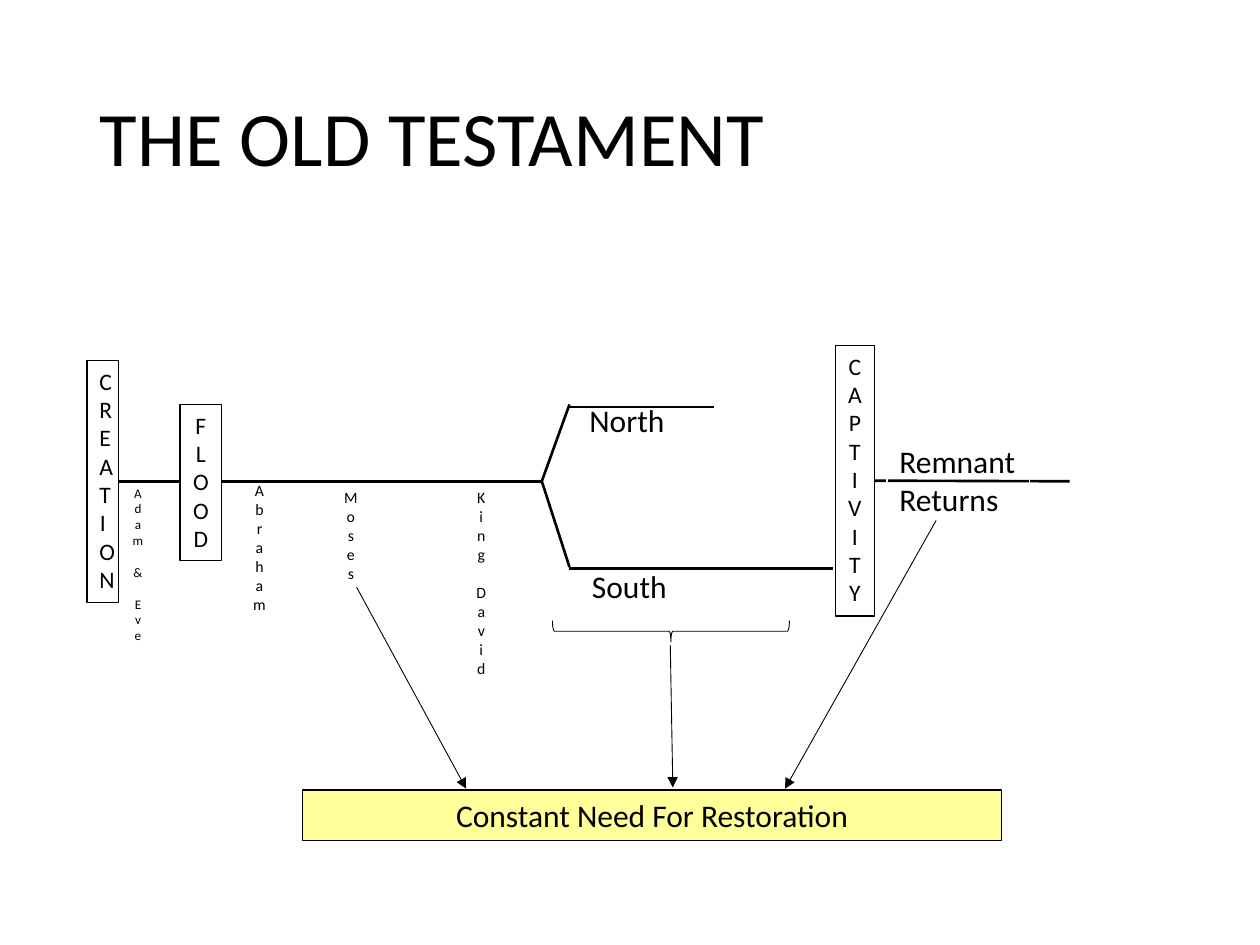
from lxml.etree import SubElement
from pptx import Presentation
from pptx.dml.color import RGBColor
from pptx.enum.shapes import MSO_CONNECTOR, MSO_SHAPE
from pptx.enum.text import MSO_ANCHOR, MSO_AUTO_SIZE, PP_ALIGN
from pptx.oxml.ns import qn
from pptx.util import Inches, Pt

THEME = {
    "font": "Calibri",
    "ink": RGBColor(0, 0, 0),
    "paper": RGBColor(255, 255, 255),
    "highlight": RGBColor(0xFF, 0xFF, 0x99),
    "title": 44, "label": 18, "event": 13.5, "person": 9, "small": 7.5,
    "timeline": 1.5, "border": 0.75, "arrow": 0.5,
}

TITLE = ("THE OLD TESTAMENT", (0.69, 0.4, 8.62, 1.45))

AXIS = 3.82
FORK = (4.3, AXIS)
TIMELINE = {
    "history": ((0.94, AXIS), FORK),
    "north rise": (FORK, (4.52, 3.21)),
    "south fall": (FORK, (4.52, 4.5)),
    "north": ((4.52, 3.23), (5.67, 3.23)),
    "south": ((4.52, 4.51), (6.61, 4.51)),
    "return": ((6.94, AXIS), (8.49, AXIS)),
}
JOINED_STARTS = {"history": "CREATION", "return": "CAPTIVITY"}

EVENTS = [
    ("CREATION", (0.69, 2.86, 0.25, 1.92), True),
    ("FLOOD", (1.43, 3.21, 0.33, 1.24), False),
    ("CAPTIVITY", (6.63, 2.74, 0.31, 2.15), False),
]
PEOPLE = [
    ("Adam & Eve", (0.94, 3.8, 0.31, 1.36), "small"),
    ("Abraham", (1.91, 3.77, 0.3, 1.16), "person"),
    ("Moses", (2.63, 3.82, 0.31, 0.86), "person"),
    ("King David", (3.68, 3.82, 0.28, 1.62), "person"),
]
KINGDOMS = [
    ("North", (4.58, 3.13, 0.8, 0.4)),
    ("South", (4.6, 4.45, 0.8, 0.4)),
]
REMNANT = (["Remnant", "Returns"], (7.04, 3.46, 1.13, 0.71))
RESTORATION = ("Constant Need For Restoration", (2.4, 6.27, 5.55, 0.4))
BRACE = (5.24, 4.07, 0.17, 1.88)
ARROWS = [
    ((2.83, 4.66), (3.7, 6.26)),
    ((7.43, 4.13), (6.23, 6.26)),
    ((5.32, 5.12), (5.34, 6.25)),
]


def inches(values):
    return [Inches(value) for value in values]


def apply(target, values):
    for name, value in values.items():
        setattr(target, name, value)


def format_font(font, size):
    apply(font, {"name": THEME["font"], "size": Pt(THEME[size])})
    font.color.rgb = THEME["ink"]


def format_line(line, width, color="ink"):
    line.color.rgb = THEME[color]
    line.width = Pt(THEME[width])


def write(shape, lines, size, align=PP_ALIGN.LEFT, wrap=False, gaps=()):
    frame = shape.text_frame
    apply(frame, {"word_wrap": wrap, "vertical_anchor": MSO_ANCHOR.TOP,
                  "auto_size": MSO_AUTO_SIZE.SHAPE_TO_FIT_TEXT})
    frame.text = "\n".join(lines)
    for index, paragraph in enumerate(frame.paragraphs):
        paragraph.alignment = align
        if index in gaps:
            paragraph.space_before = Pt(THEME[size] * 1.22)
        format_font(paragraph.font, size)


def write_stacked(shape, text, size, wrap=False):
    letters, gaps = [], []
    for word in text.split():
        if letters:
            gaps.append(len(letters))
        letters.extend(word)
    write(shape, letters, size, PP_ALIGN.CENTER, wrap, gaps)


def add_box(slide, box, fill=None, border="ink", width="border", kind=MSO_SHAPE.RECTANGLE):
    shape = slide.shapes.add_shape(kind, *inches(box))
    shape.shadow.inherit = False
    if fill:
        shape.fill.solid()
        shape.fill.fore_color.rgb = THEME[fill]
    else:
        shape.fill.background()
    format_line(shape.line, width, border)
    return shape


def add_line(slide, start, end, width, arrow=False):
    connector = slide.shapes.add_connector(MSO_CONNECTOR.STRAIGHT, *inches(start + end))
    format_line(connector.line, width)
    if arrow:
        SubElement(connector.line._get_or_add_ln(), qn("a:tailEnd"), type="triangle")
    SubElement(connector._element.spPr, qn("a:effectLst"))
    return connector


def add_title(slide):
    text, box = TITLE
    title = slide.shapes.title
    apply(title, dict(zip(("left", "top", "width", "height"), inches(box))))
    title.text_frame.text = text
    title.text_frame.vertical_anchor = MSO_ANCHOR.MIDDLE
    paragraph = title.text_frame.paragraphs[0]
    apply(paragraph, {"alignment": PP_ALIGN.LEFT, "line_spacing": 0.9})
    format_font(paragraph.font, "title")


def main():
    presentation = Presentation()
    apply(presentation, {"slide_width": Inches(10), "slide_height": Inches(7.5)})
    slide = presentation.slides.add_slide(presentation.slide_layouts[5])
    add_title(slide)

    lines = {name: add_line(slide, *ends, "timeline") for name, ends in TIMELINE.items()}

    events = {}
    for text, box, wrap in EVENTS:
        events[text] = add_box(slide, box, "paper")
        write_stacked(events[text], text, "event", wrap)
    for name, event in JOINED_STARTS.items():
        lines[name].begin_connect(events[event], 3)

    for text, box in KINGDOMS:
        write(slide.shapes.add_textbox(*inches(box)), [text], "label")
    words, box = REMNANT
    write(add_box(slide, box, border="paper"), words, "label")

    for text, box, size in PEOPLE:
        write_stacked(slide.shapes.add_textbox(*inches(box)), text, size)

    text, box = RESTORATION
    write(add_box(slide, box, "highlight"), [text], "label", PP_ALIGN.CENTER, True)
    for start, end in ARROWS:
        add_line(slide, start, end, "arrow", arrow=True)
    brace = add_box(slide, BRACE, width="arrow", kind=MSO_SHAPE.LEFT_BRACE)
    brace.rotation = 270

    presentation.save("out.pptx")


if __name__ == "__main__":
    main()
